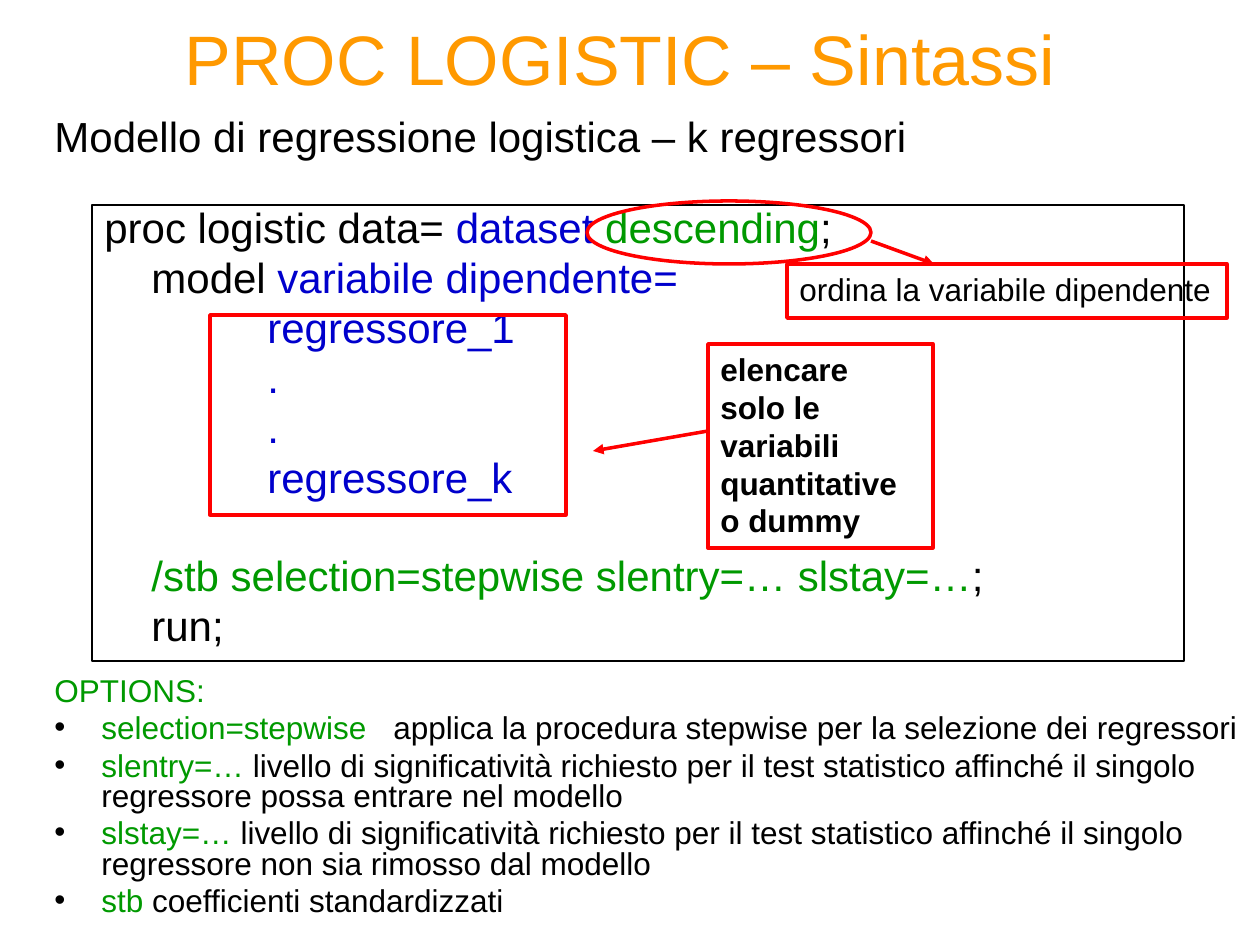
from dataclasses import dataclass

from lxml.etree import SubElement
from pptx import Presentation
from pptx.dml.color import RGBColor
from pptx.enum.shapes import MSO_CONNECTOR, MSO_SHAPE
from pptx.enum.text import MSO_ANCHOR, PP_ALIGN
from pptx.oxml.ns import qn
from pptx.util import Pt

SCALE = 914400 / 126


@dataclass(frozen=True)
class Theme:
    font: str = "Arial"
    black: str = "000000"
    white: str = "FFFFFF"
    orange: str = "FF9900"
    blue: str = "0000CC"
    green: str = "009900"
    red: str = "FF0000"
    title: int = 40
    body: int = 24
    small: int = 18
    border: float = 0.75
    mark: int = 2


T = Theme()


def px(n):
    return round(n * SCALE)


def rgb(color):
    return RGBColor.from_string(color)


def write(p, parts, size, bold=False):
    for text, color in parts:
        r = p.add_run()
        r.text = text
        r.font.name = T.font
        r.font.size = Pt(size)
        r.font.bold = bold
        r.font.color.rgb = rgb(color)


def paragraphs(tf, count):
    return [tf.paragraphs[0]] + [tf.add_paragraph() for _ in range(count - 1)]


def indent(p, left, first=0):
    pPr = p._p.get_or_add_pPr()
    pPr.set("marL", str(px(left)))
    pPr.set("indent", str(px(first)))
    return pPr


def add_text(s, box, parts, size):
    sp = s.shapes.add_textbox(*map(px, box))
    tf = sp.text_frame
    tf.word_wrap = True
    write(tf.paragraphs[0], parts, size)
    return tf


def add_outline(s, kind, box, color, width, fill=None):
    sp = s.shapes.add_shape(kind, *map(px, box))
    sp.shadow.inherit = False
    sp.line.color.rgb = rgb(color)
    sp.line.width = Pt(width)
    if fill:
        sp.fill.solid()
        sp.fill.fore_color.rgb = rgb(fill)
    else:
        sp.fill.background()
    tf = sp.text_frame
    tf.word_wrap = True
    tf.vertical_anchor = MSO_ANCHOR.TOP
    tf.paragraphs[0].alignment = PP_ALIGN.LEFT
    return sp


def add_arrow(s, start, end):
    cx = s.shapes.add_connector(MSO_CONNECTOR.STRAIGHT, *map(px, start + end))
    cx.line.color.rgb = rgb(T.red)
    cx.line.width = Pt(T.mark)
    SubElement(cx.line._get_or_add_ln(), qn("a:tailEnd"), type="triangle")
    SubElement(cx._element.spPr, qn("a:effectLst"))


def add_heading(s, x, y, w):
    tf = add_text(s, (x + 11, y, w - 21, 94), [("PROC LOGISTIC – Sintassi", T.orange)], T.title)
    tf.vertical_anchor = MSO_ANCHOR.MIDDLE
    tf.paragraphs[0].alignment = PP_ALIGN.CENTER
    add_text(s, (x, y + 94, w, 63),
             [("Modello di regressione logistica – k regressori", T.black)], T.body)


def add_code(s, x, y, w, h):
    sp = add_outline(s, MSO_SHAPE.RECTANGLE, (x, y, w, h), T.black, T.border)
    step, deep = 47, 163
    gap, wide_gap = 5.5, 33.2
    lines = [
        (0, gap, [("proc logistic data= ", T.black), ("dataset ", T.blue),
                  ("descending", T.green), (";", T.black)]),
        (step, gap, [("model ", T.black), ("variabile dipendente=", T.blue)]),
        *[(deep, gap, [(text, T.blue)]) for text in ("regressore_1", ".", ".", "regressore_k")],
        (step, wide_gap, [("/stb selection=stepwise slentry=… slstay=…", T.green),
                          (";", T.black)]),
        (step, gap, [("run;", T.black)]),
    ]
    for p, (left, before, parts) in zip(paragraphs(sp.text_frame, len(lines)), lines):
        p.alignment = PP_ALIGN.LEFT
        p.line_spacing = 0.8
        p.space_before = Pt(before)
        indent(p, left)
        write(p, parts, T.body)


def add_options(s, x, y, w, h):
    options = [
        ("selection=stepwise\t", "applica la procedura stepwise per la selezione dei regressori"),
        ("slentry=… ", "livello di significatività richiesto per il test statistico "
                       "affinché il singolo regressore possa entrare nel modello"),
        ("slstay=… ", "livello di significatività richiesto per il test statistico "
                      "affinché il singolo regressore non sia rimosso dal modello"),
        ("stb ", "coefficienti standardizzati"),
    ]
    tf = add_text(s, (x, y, w, h), [("OPTIONS:", T.green)], T.small)
    for name, meaning in options:
        p = tf.add_paragraph()
        write(p, [(name, T.green), (meaning, T.black)], T.small)
    for p in tf.paragraphs:
        p.line_spacing = 0.8
        p.space_before = Pt(4.1)
    for p in tf.paragraphs[1:]:
        pPr = indent(p, 47, -47)
        color = SubElement(pPr, qn("a:buClr"))
        SubElement(color, qn("a:srgbClr"), val=T.black)
        SubElement(pPr, qn("a:buFont"), typeface=T.font)
        SubElement(pPr, qn("a:buChar"), char="•")
        tabs = SubElement(pPr, qn("a:tabLst"))
        SubElement(tabs, qn("a:tab"), pos=str(px(339)), algn="l")


def add_order_note(s, x, y):
    add_outline(s, MSO_SHAPE.OVAL, (x, y, 284, 63), T.red, T.mark)
    sp = add_outline(s, MSO_SHAPE.RECTANGLE, (x + 200, y + 63, 440, 54), T.red, T.mark)
    sp.text_frame.word_wrap = False
    write(sp.text_frame.paragraphs[0], [("ordina la variabile dipendente", T.black)], T.small)
    add_arrow(s, (x + 284, y + 40), (x + 347, y + 63))


def add_regressor_note(s, x, y):
    sp = add_outline(s, MSO_SHAPE.RECTANGLE, (x + 498, y + 29, 225, 204), T.red, T.mark, T.white)
    write(sp.text_frame.paragraphs[0],
          [("elencare solo le variabili quantitative o dummy", T.black)], T.small, bold=True)
    add_outline(s, MSO_SHAPE.RECTANGLE, (x, y, 356, 200), T.red, T.mark)
    add_arrow(s, (x + 498, y + 116), (x + 383, y + 136))


def main():
    prs = Presentation()
    prs.slide_width = px(1260)
    prs.slide_height = px(945)
    s = prs.slides.add_slide(prs.slide_layouts[6])
    add_code(s, 92, 205, 1092, 456)
    add_heading(s, 42, 10, 1155)
    add_options(s, 42, 672, 1218, 179)
    add_order_note(s, 587, 201)
    add_regressor_note(s, 210, 315)
    prs.save("out.pptx")


if __name__ == "__main__":
    main()
